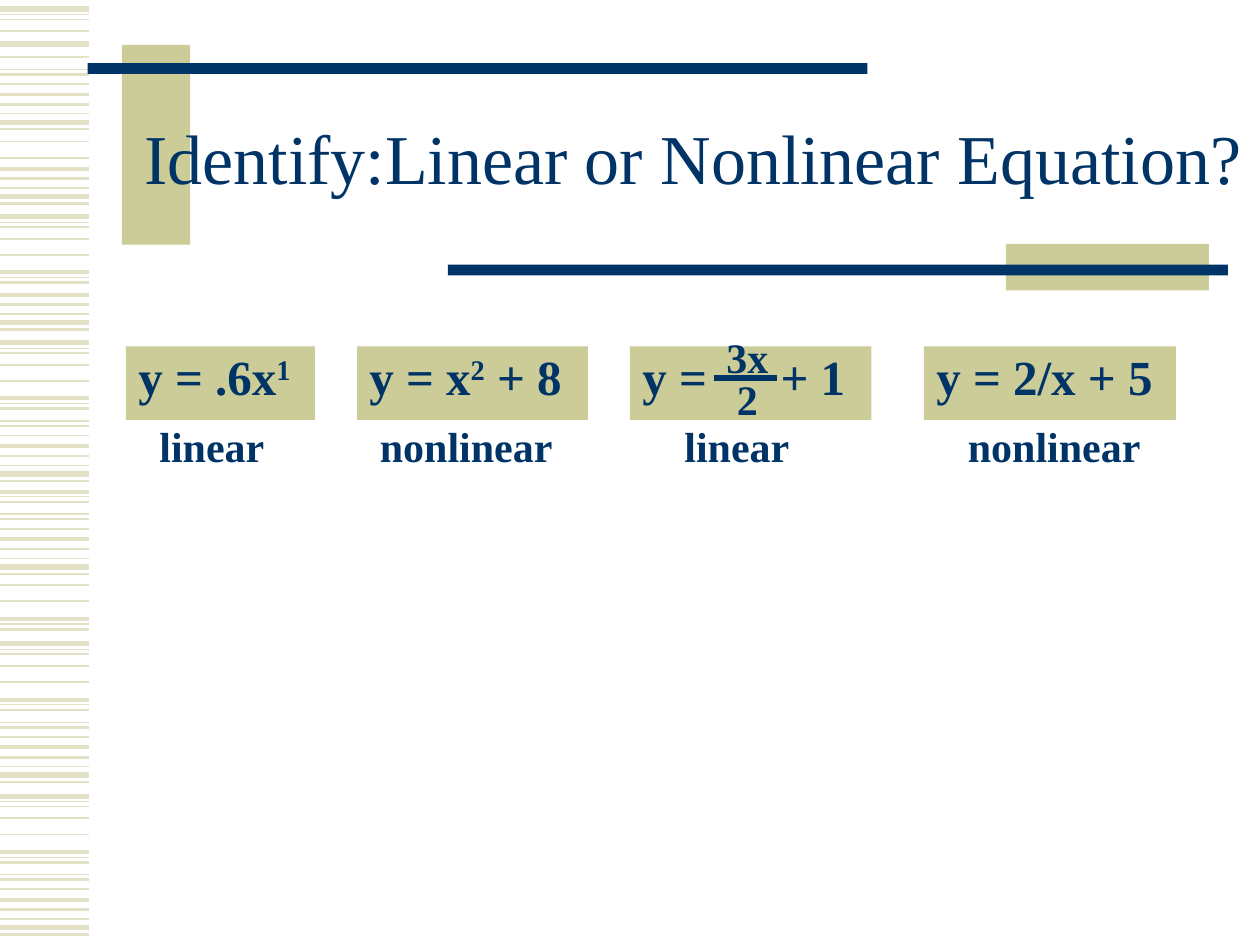
from lxml import etree
from pptx import Presentation, util as u
from pptx.dml.color import RGBColor
from pptx.enum import shapes, text
from pptx.oxml.ns import qn

Pt = u.Pt
FONT = "Times New Roman"
COLORS = {"navy": "003366", "khaki": "CCCC99", "stripe": "E3E2C7"}

TITLE = "Identify:Linear or Nonlinear Equation?"
# Equation as (text, is superscript) spans, box left and width, answer, answer left and width
EQUATIONS = [
    ([("y = .6x", False), ("1", True)], 72, 108, "linear", 84, 84),
    ([("y = x", False), ("2", True), (" + 8", False)], 204, 132, "nonlinear", 210, 114),
    ([("y =\t+ 1", False)], 360, 138, "linear", 384, 84),
    ([("y = 2/x + 5", False)], 528, 144, "nonlinear", 546, 114),
]
FRACTION = [("3x", 408, 186, 42), ("2", 414, 210, 24)]  # text, left, top, width
FRACTION_BAR = (408, 444, 216)  # left, right, y
FRACTION_TAB = 79

# Title decoration: left, top, width, height, colour
BARS = [
    (69.7, 25.6, 39, 114.2, "khaki"),
    (50, 36, 445.7, 6.2, "navy"),
    (574.8, 139.4, 116, 26.5, "khaki"),
    (256, 151.2, 445.7, 6.2, "navy"),
]

STRIPE_WIDTH = 51
# One stripe motif: offset and line weight
MOTIF = [
    (0, 3), (3.2, 0.75), (5.9, 1), (12.6, 1), (21.8, 1), (31.9, 2.25),
    (34.8, 0.75), (37.8, 1.5), (44.8, 0.75), (47.7, 1.5), (53.1, 1),
    (59.2, 2.25), (64.8, 1.5), (70.2, 0.75), (75, 3), (79, 1.5),
]
# Where the motif repeats, whole or in part: base y, first and last stripe used
REPEATS = [
    (5.2, 0, 3), (-49.8, 14, 14), (-5.2, 7, 15), (59, 4, 4),
    (37.2, 10, 15), (123.8, 0, 7), (109.2, 11, 15), (195.8, 0, 15),
    (249, 5, 15), (321.8, 3, 7), (367.9, 0, 15), (455, 0, 15),
]


def color(name):
    return RGBColor.from_string(COLORS[name])


def add_line(page, left, right, y, weight, name):
    line = page.shapes.add_connector(
        shapes.MSO_CONNECTOR.STRAIGHT, Pt(left), Pt(y), Pt(right), Pt(y))
    line.line.width = Pt(weight)
    line.line.color.rgb = color(name)
    etree.SubElement(line._element.spPr, qn("a:effectLst"))


def add_bar(page, left, top, width, height, name):
    bar = page.shapes.add_shape(
        shapes.MSO_SHAPE.RECTANGLE, Pt(left), Pt(top), Pt(width), Pt(height))
    bar.shadow.inherit = False
    bar.fill.solid()
    bar.fill.fore_color.rgb = color(name)
    bar.line.fill.background()
    return bar


def add_text_box(page, left, top, width, height):
    return page.shapes.add_textbox(Pt(left), Pt(top), Pt(width), Pt(height))


def write(box, spans, size, spacing, before, bold=True,
          align=text.PP_ALIGN.LEFT, anchor=text.MSO_ANCHOR.TOP):
    """Fill the box with one paragraph of (text, is superscript) spans."""
    frame = box.text_frame
    frame.word_wrap = True
    frame.vertical_anchor = anchor
    para = frame.paragraphs[0]
    para.alignment = align
    para.line_spacing = spacing
    para.space_before = Pt(before)
    para.font.name = FONT
    para.font.size = Pt(size)
    para.font.bold = bold
    para.font.color.rgb = color("navy")
    for words, raised in spans:
        span = para.add_run()
        span.text = words
        if raised:
            span.font._element.set("baseline", "30000")
    return para


def add_tab_stop(para, position):
    properties = para._p.get_or_add_pPr()
    stops = etree.Element(qn("a:tabLst"))
    etree.SubElement(stops, qn("a:tab"), pos=str(Pt(position)), algn="l")
    properties.find(qn("a:defRPr")).addprevious(stops)


def main():
    deck = Presentation()
    deck.slide_width, deck.slide_height = Pt(720), Pt(540)
    page = deck.slides.add_slide(deck.slide_layouts[5])

    for base, first, last in REPEATS:
        for offset, weight in MOTIF[first:last + 1]:
            add_line(page, 0, STRIPE_WIDTH, base + offset, weight, "stripe")
    for bar in BARS:
        add_bar(page, *bar)

    title = page.shapes.title
    title.left, title.top, title.width, title.height = Pt(72), Pt(48), Pt(648), Pt(90)
    write(title, [(TITLE, False)], 40, 0.85, 0, bold=False,
          align=text.PP_ALIGN.CENTER, anchor=text.MSO_ANCHOR.MIDDLE)
    page.shapes._spTree.append(title._element)  # bring in front of the bars

    for spans, left, width, answer, answer_left, answer_width in EQUATIONS:
        para = write(add_bar(page, left, 198, width, 42, "khaki"), spans, 28, 0.9, 2.6)
        if "\t" in spans[0][0]:
            add_tab_stop(para, FRACTION_TAB)
        write(add_text_box(page, answer_left, 240, answer_width, 30),
              [(answer, False)], 24, 0.9, 2)

    for words, left, top, width in FRACTION:
        write(add_text_box(page, left, top, width, 36), [(words, False)], 24, 1, 3)
    add_line(page, *FRACTION_BAR, 3, "navy")

    deck.save("out.pptx")


if __name__ == "__main__":
    main()
